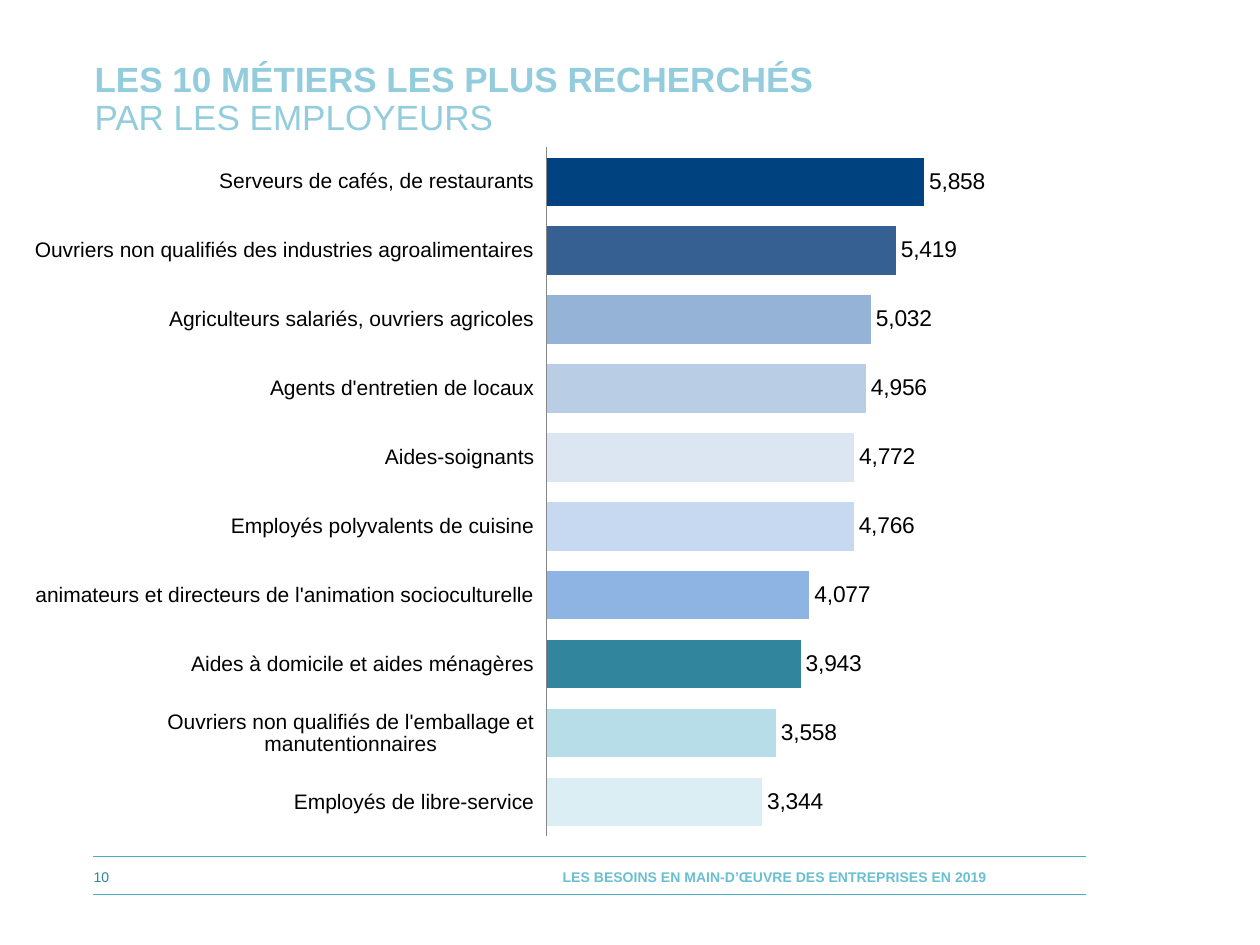
from dataclasses import dataclass

from lxml import etree
from pptx import Presentation
from pptx.chart.data import CategoryChartData
from pptx.dml.color import RGBColor
from pptx.enum.chart import XL_CHART_TYPE, XL_LABEL_POSITION, XL_TICK_LABEL_POSITION, XL_TICK_MARK
from pptx.enum.shapes import MSO_CONNECTOR
from pptx.enum.text import MSO_ANCHOR, MSO_AUTO_SIZE, PP_ALIGN
from pptx.oxml import parse_xml
from pptx.oxml.ns import nsdecls, qn
from pptx.util import Inches, Pt

BARS = XL_CHART_TYPE.BAR_CLUSTERED
OUTSIDE_END = XL_LABEL_POSITION.OUTSIDE_END
LABELS_LOW = XL_TICK_LABEL_POSITION.LOW
NO_TICK = XL_TICK_MARK.NONE
STRAIGHT = MSO_CONNECTOR.STRAIGHT
MIDDLE = MSO_ANCHOR.MIDDLE
NO_AUTOFIT = MSO_AUTO_SIZE.NONE
LEFT, CENTER = PP_ALIGN.LEFT, PP_ALIGN.CENTER


@dataclass(frozen=True)
class Theme:
    font: str = "Arial"
    title: str = "93CDDD"
    footer: str = "6ABFD1"
    page: str = "31859C"
    rule: str = "4BACC6"
    axis: str = "868686"
    text: str = "000000"
    title_size: int = 20
    footer_size: int = 8
    category_size: int = 12
    value_size: int = 13
    rule_width: float = 0.5


THEME = Theme()

JOBS = [
    ("Serveurs de cafés, de restaurants", 5858, "00427F"),
    ("Ouvriers non qualifiés des industries agroalimentaires", 5419, "376092"),
    ("Agriculteurs salariés, ouvriers agricoles", 5032, "95B3D7"),
    ("Agents d'entretien de locaux", 4956, "B9CDE5"),
    ("Aides-soignants", 4772, "DCE6F2"),
    ("Employés polyvalents de cuisine", 4766, "C6D9F1"),
    ("animateurs et directeurs de l'animation socioculturelle", 4077, "8EB4E3"),
    ("Aides à domicile et aides ménagères", 3943, "31859C"),
    ("Ouvriers non qualifiés de l'emballage et manutentionnaires", 3558, "B7DEE8"),
    ("Employés de libre-service", 3344, "DBEEF4"),
]


def style_font(font, size, color, bold=False):
    font.name = THEME.font
    font.size = Pt(size)
    font.bold = bold
    font.color.rgb = RGBColor.from_string(color)


def add_run(paragraph, text, size, color, bold=False):
    run = paragraph.add_run()
    run.text = text
    style_font(run.font, size, color, bold)


def place_title(slide, box):
    title = slide.shapes.title
    title.left, title.top, title.width, title.height = map(Inches, box)
    frame = title.text_frame
    frame.word_wrap = True
    frame.auto_size = NO_AUTOFIT
    frame.vertical_anchor = MIDDLE
    heading = frame.paragraphs[0]
    heading.alignment = LEFT
    heading.line_spacing = 0.9
    add_run(heading, "LES 10 MÉTIERS LES PLUS RECHERCHÉS ", THEME.title_size, THEME.title, True)
    heading.add_line_break()
    add_run(heading, "PAR LES EMPLOYEURS", THEME.title_size, THEME.title)


def set_plot_area(chart, box, plot_box):
    left, top, width, height = box
    plot_left, plot_top, plot_width, plot_height = plot_box
    fractions = {
        "x": (plot_left - left) / width,
        "y": (plot_top - top) / height,
        "w": plot_width / width,
        "h": plot_height / height,
    }
    plot_area = chart.plots[0]._element.getparent()
    for old in plot_area.findall(qn("c:layout")):
        plot_area.remove(old)
    layout = parse_xml(
        f'<c:layout {nsdecls("c")}><c:manualLayout><c:layoutTarget val="inner"/>'
        '<c:xMode val="edge"/><c:yMode val="edge"/></c:manualLayout></c:layout>'
    )
    for key, fraction in fractions.items():
        etree.SubElement(layout[0], qn(f"c:{key}")).set("val", f"{fraction:.4f}")
    plot_area.insert(0, layout)


def place_jobs_chart(slide, box, plot_box):
    names, counts, colors = zip(*JOBS)
    jobs = CategoryChartData(number_format="#,##0")
    jobs.categories = names
    jobs.add_series("Series 1", counts)
    chart = slide.shapes.add_chart(BARS, *map(Inches, box), jobs).chart
    chart.has_legend = False
    chart.has_title = False
    style_font(chart.font, THEME.category_size, THEME.text)

    job_axis = chart.category_axis
    job_axis.reverse_order = True
    job_axis.major_tick_mark = NO_TICK
    job_axis.tick_label_position = LABELS_LOW
    job_axis.format.line.color.rgb = RGBColor.from_string(THEME.axis)
    style_font(job_axis.tick_labels.font, THEME.category_size, THEME.text)

    count_axis = chart.value_axis
    count_axis.visible = False
    count_axis.has_major_gridlines = False
    count_axis.minimum_scale = 0
    count_axis.maximum_scale = 7000

    plot = chart.plots[0]
    plot.gap_width = 42
    plot.vary_by_categories = False
    bars = plot.series[0]
    for index, color in enumerate(colors):
        fill = bars.points[index].format.fill
        fill.solid()
        fill.fore_color.rgb = RGBColor.from_string(color)

    plot.has_data_labels = True
    labels = plot.data_labels
    labels.show_value = True
    labels.position = OUTSIDE_END
    labels.number_format = "#,##0"
    labels.number_format_is_linked = False
    style_font(labels.font, THEME.value_size, THEME.text)
    set_plot_area(chart, box, plot_box)


def add_caption(slide, box, text, color, bold=False):
    frame = slide.shapes.add_textbox(*map(Inches, box)).text_frame
    frame.word_wrap = True
    frame.vertical_anchor = MIDDLE
    frame.margin_top = frame.margin_bottom = 0
    caption = frame.paragraphs[0]
    caption.alignment = CENTER
    add_run(caption, text, THEME.footer_size, color, bold)


def place_footer(slide, box):
    left, top, width, height = box
    for y in (top, top + height):
        rule = slide.shapes.add_connector(
            STRAIGHT, Inches(left), Inches(y), Inches(left + width), Inches(y)
        )
        rule.line.color.rgb = RGBColor.from_string(THEME.rule)
        rule.line.width = Pt(THEME.rule_width)
        etree.SubElement(rule._element.spPr, qn("a:effectLst"))
    add_caption(
        slide, (left + 2.85, top + 0.01, 5.12, height),
        "LES BESOINS EN MAIN-D’ŒUVRE DES ENTREPRISES EN 2019", THEME.footer, True,
    )
    add_caption(slide, (left - 0.21, top - 0.04, 0.55, height + 0.1), "10", THEME.page)


def main():
    deck = Presentation()
    deck.slide_width, deck.slide_height = Inches(10), Inches(7.5)
    slide = deck.slides.add_slide(deck.slide_layouts[5])
    place_footer(slide, (0.74, 6.8, 7.88, 0.3))
    place_title(slide, (0.65, 0.44, 8.89, 0.71))
    place_jobs_chart(slide, (0.18, 1.06, 7.91, 5.7), (4.34, 1.17, 3.58, 5.47))
    deck.save("out.pptx")


if __name__ == "__main__":
    main()
